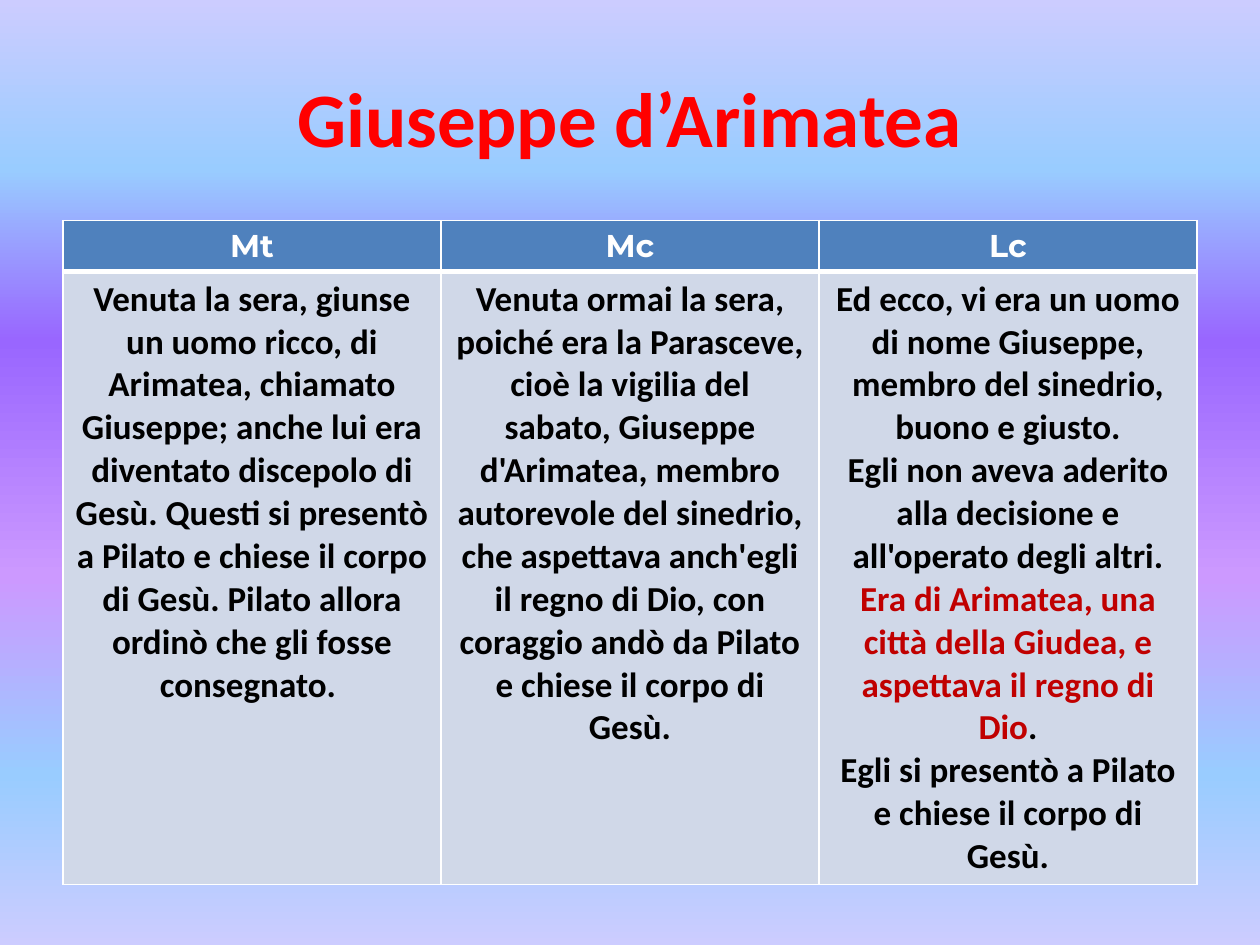
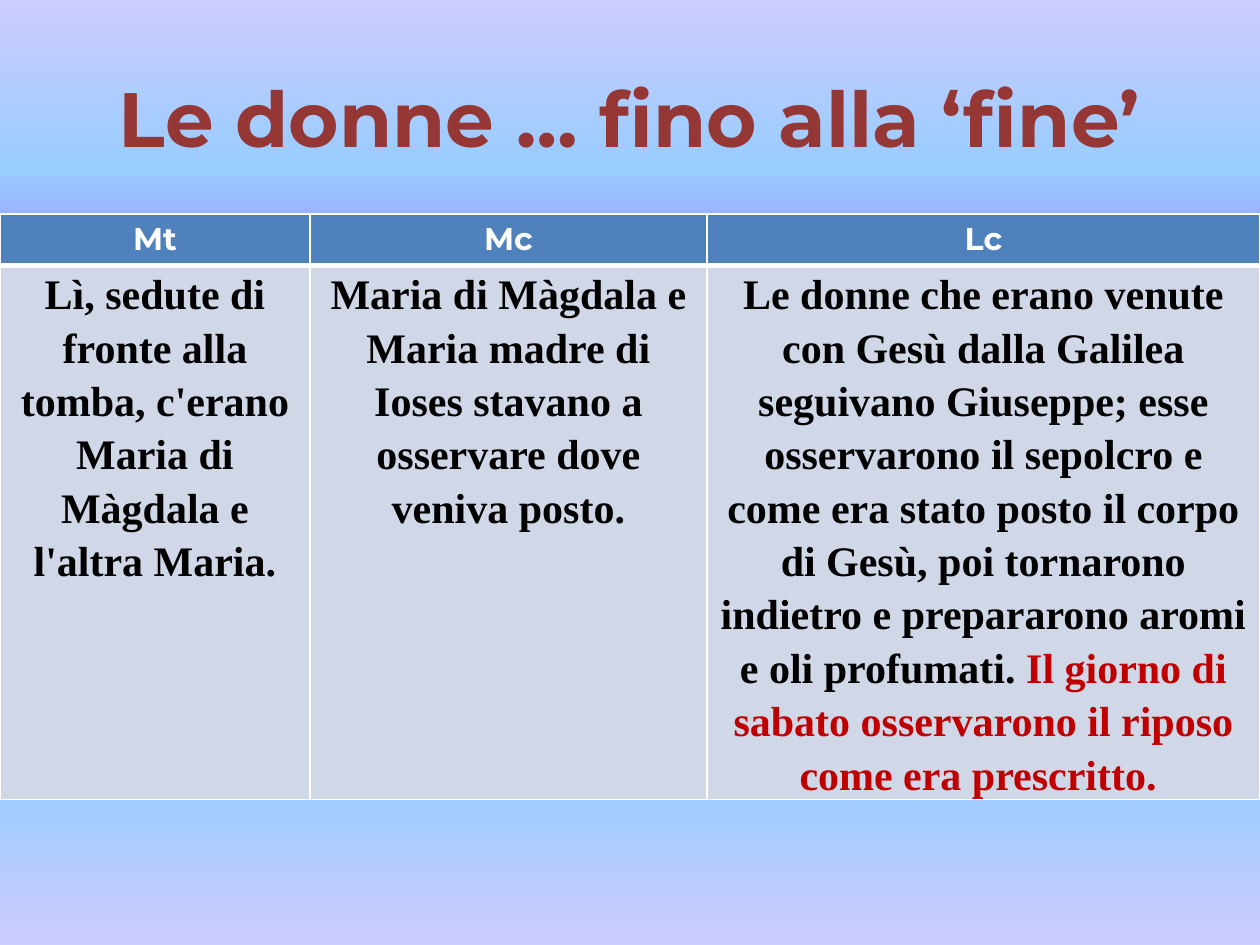
from lxml import etree
from pptx import Presentation
from pptx.dml.color import RGBColor
from pptx.enum import text
from pptx.oxml import ns
from pptx.util import Pt

WHITE = RGBColor(0xFF, 0xFF, 0xFF)
BLACK = RGBColor(0x00, 0x00, 0x00)
RED = RGBColor(0xFF, 0x00, 0x00)
BRICK = RGBColor(0x95, 0x37, 0x35)
CRIMSON = RGBColor(0xC0, 0x00, 0x00)
HEADER_BLUE = RGBColor(0x4F, 0x81, 0xBD)
PALE_BLUE = RGBColor(0xD0, 0xD8, 0xE8)
LILAC = RGBColor(0xCC, 0xCC, 0xFF)
SKY = RGBColor(0x99, 0xCC, 0xFF)
VIOLET = RGBColor(0x99, 0x66, 0xFF)
ORCHID = RGBColor(0xCC, 0x99, 0xFF)

BACKGROUND_STOPS = [(0, LILAC), (18, SKY), (36, VIOLET),
                    (61, ORCHID), (82, SKY), (100, LILAC)]
GOSPELS = ["Mt", "Mc", "Lc"]
TITLE_BOX = (36, 21.6, 648, 90)
HEADER_HEIGHT = 29.2
THIN, THICK = 1, 3

# Each column is a list of paragraphs, each paragraph a list of (text, colour) runs.
JOSEPH = [
    [[("Venuta la sera, giunse un uomo ricco, di Arimatea, chiamato Giuseppe; "
       "anche lui era diventato discepolo di Gesù. Questi si presentò a Pilato "
       "e chiese il corpo di Gesù. Pilato allora ordinò che gli fosse "
       "consegnato. ", BLACK)]],
    [[("Venuta ormai la sera, poiché era la Parasceve, cioè la vigilia del "
       "sabato, Giuseppe d'Arimatea, membro autorevole del sinedrio, che "
       "aspettava anch'egli il regno di Dio, con coraggio andò da Pilato e "
       "chiese il corpo di Gesù.", BLACK)]],
    [[("Ed ecco, vi era un uomo di nome Giuseppe, membro del sinedrio, buono e "
       "giusto.", BLACK)],
     [("Egli non aveva aderito alla decisione e all'operato degli altri. ", BLACK),
      ("Era di Arimatea, una città della Giudea, e aspettava il regno di Dio",
       CRIMSON),
      (".", BLACK)],
     [("Egli si presentò a Pilato e chiese il corpo di Gesù.", BLACK)]],
]
WOMEN = [
    [[("Lì, sedute di fronte alla tomba, c'erano Maria di Màgdala e l'altra "
       "Maria.", BLACK)]],
    [[("Maria di Màgdala e Maria madre di Ioses stavano a osservare dove veniva "
       "posto.", BLACK)]],
    [[("Le donne che erano venute con Gesù dalla Galilea seguivano Giuseppe; "
       "esse osservarono il sepolcro e come era stato posto il corpo di Gesù, "
       "poi tornarono indietro e prepararono aromi e oli profumati. ", BLACK),
      ("Il giorno di sabato osservarono il riposo come era prescritto. ",
       CRIMSON)]],
]


def paint_background(master):
    fill = master.background.fill
    fill.gradient()
    fill.gradient_angle = 270  # counter-clockwise, so top to bottom
    stops = master.element.find(".//" + ns.qn("a:gsLst"))
    for stop in list(stops):
        stops.remove(stop)
    for percent, color in BACKGROUND_STOPS:
        stop = etree.SubElement(stops, ns.qn("a:gs"), pos=str(percent * 1000))
        etree.SubElement(stop, ns.qn("a:srgbClr"), val=str(color))


def add_text(paragraph, content, *, font, size, color):
    paragraph.alignment = text.PP_ALIGN.CENTER
    run = paragraph.add_run()
    run.text = content
    run.font.name = font
    run.font.size = Pt(size)
    run.font.bold = True
    run.font.color.rgb = color


def set_borders(cell, **widths):
    """Draw white borders; widths are points keyed by side L, R, T and B."""
    properties = cell._tc.get_or_add_tcPr()
    for side, width in widths.items():
        line = etree.SubElement(properties, ns.qn("a:ln" + side), w=str(Pt(width)))
        solid = etree.SubElement(line, ns.qn("a:solidFill"))
        etree.SubElement(solid, ns.qn("a:srgbClr"), val=str(WHITE))


def fill_cell(cell, color):
    cell.fill.solid()
    cell.fill.fore_color.rgb = color


def add_title(slide, content, box, **style):
    title = slide.shapes.title
    title.left, title.top, title.width, title.height = map(Pt, box)
    frame = title.text_frame
    frame.vertical_anchor = text.MSO_ANCHOR.MIDDLE
    add_text(frame.paragraphs[0], content, size=44, **style)


def add_gospel_table(slide, passages, box, shares, *, font, size,
                     line_spacing=None, margins=(7.2, 3.6)):
    """Put one passage per column; shares are the column widths as fractions."""
    left, top, width, height = box
    table = slide.shapes.add_table(2, len(GOSPELS), *map(Pt, box)).table
    table.rows[0].height = Pt(HEADER_HEIGHT)
    table.rows[1].height = Pt(height - HEADER_HEIGHT)
    for index, (gospel, passage, share) in enumerate(zip(GOSPELS, passages, shares)):
        table.columns[index].width = Pt(width * share)

        header = table.cell(0, index)
        set_borders(header, L=THIN, R=THIN, T=THIN, B=THICK)
        fill_cell(header, HEADER_BLUE)
        add_text(header.text_frame.paragraphs[0], gospel,
                 font="Montserrat", size=18, color=WHITE)

        body = table.cell(1, index)
        set_borders(body, L=THIN, R=THIN, T=THICK, B=THIN)
        fill_cell(body, PALE_BLUE)
        body.margin_left = body.margin_right = Pt(margins[0])
        body.margin_top = body.margin_bottom = Pt(margins[1])
        frame = body.text_frame
        for number, runs in enumerate(passage):
            paragraph = frame.add_paragraph() if number else frame.paragraphs[0]
            paragraph.line_spacing = line_spacing
            for content, color in runs:
                add_text(paragraph, content, font=font, size=size, color=color)


def add_slide(presentation):
    return presentation.slides.add_slide(
        presentation.slide_layouts.get_by_name("Title Only"))


def main():
    presentation = Presentation()
    presentation.slide_width, presentation.slide_height = Pt(720), Pt(540)
    paint_background(presentation.slide_master)

    joseph = add_slide(presentation)
    add_title(joseph, "Giuseppe d’Arimatea", TITLE_BOX, font="Calibri", color=RED)
    add_gospel_table(joseph, JOSEPH, (36, 126, 648, 372), [1 / 3] * 3,
                     font="Calibri", size=20)

    women = add_slide(presentation)
    add_title(women, "Le donne … fino alla ‘fine’", TITLE_BOX,
              font="Montserrat", color=BRICK)
    add_gospel_table(women, WOMEN, (0, 122.4, 720, 334.5), [0.246, 0.315, 0.439],
                     font="Times New Roman", size=24, line_spacing=1.15,
                     margins=(5, 0))

    presentation.save("out.pptx")


if __name__ == "__main__":
    main()
